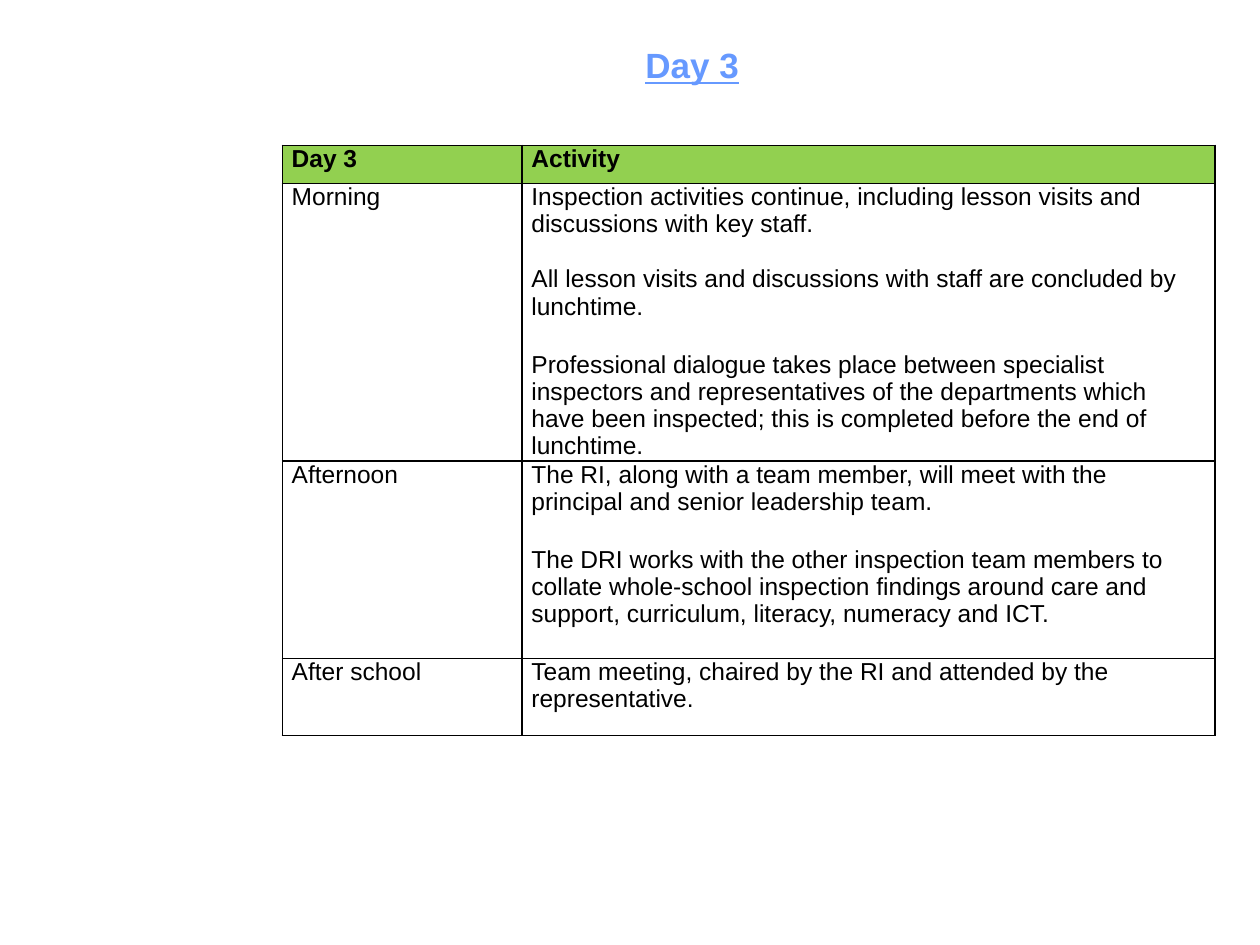
"""Build the Day 3 inspection timetable slide."""
from dataclasses import dataclass

import pptx
import pptx.dml.color
import pptx.enum.text
import pptx.oxml
import pptx.oxml.ns
import pptx.util

Pt = pptx.util.Pt
ALIGN = pptx.enum.text.PP_ALIGN
ANCHOR = pptx.enum.text.MSO_ANCHOR
FONT = "Arial"
BLACK = "000000"
HEADER_GREEN = "92D050"
TITLE_BLUE = "6699FF"
COLUMN_WIDTHS = (137, 396)


@dataclass
class Session:
    time: str
    activities: list[str]
    height: float
    gaps: tuple[float, ...] = ()
    header: bool = False


SESSIONS = [
    Session("Day 3", ["Activity"], 21.8, header=True),
    Session("Morning", [
        "Inspection activities continue, including lesson visits and "
        "discussions with key staff.",
        "All lesson visits and discussions with staff are concluded by lunchtime.",
        "Professional dialogue takes place between specialist inspectors and "
        "representatives of the departments which have been inspected; this is "
        "completed before the end of lunchtime.",
    ], 158.7, gaps=(16, 17.5)),
    Session("Afternoon", [
        "The RI, along with a team member, will meet with the principal and "
        "senior leadership team.",
        "The DRI works with the other inspection team members to collate "
        "whole-school inspection findings around care and support, curriculum, "
        "literacy, numeracy and ICT.",
    ], 112.8, gaps=(17.5,)),
    Session("After school", [
        "Team meeting, chaired by the RI and attended by the representative.",
    ], 43.9),
]


def color(value: str) -> pptx.dml.color.RGBColor:
    return pptx.dml.color.RGBColor.from_string(value)


def write(para, text: str, *, size: float = 14, fill: str = BLACK,
          bold: bool = False, underline: bool = False, align=ALIGN.LEFT,
          before: float = 0, leading: float | None = None) -> None:
    para.alignment = align
    para.space_before = Pt(before)
    if leading:
        para.line_spacing = Pt(leading)
    span = para.add_run()
    span.text = text
    font = span.font
    font.name, font.size = FONT, Pt(size)
    font.bold, font.underline = bold, underline
    font.color.rgb = color(fill)


def add_borders(cell, width: float = 1) -> None:
    properties = cell._tc.get_or_add_tcPr()
    namespace = pptx.oxml.ns.nsdecls("a")
    for index, side in enumerate(("lnL", "lnR", "lnT", "lnB")):
        properties.insert(index, pptx.oxml.parse_xml(
            f'<a:{side} {namespace} w="{Pt(width)}"><a:solidFill>'
            f'<a:srgbClr val="{BLACK}"/></a:solidFill></a:{side}>'))


def fill_cell(cell, texts: list[str], session: Session) -> None:
    cell.margin_left = cell.margin_right = Pt(5.4)
    cell.margin_top = cell.margin_bottom = 0
    cell.vertical_anchor = ANCHOR.TOP
    if session.header:
        cell.fill.solid()
        cell.fill.fore_color.rgb = color(HEADER_GREEN)
    else:
        cell.fill.background()
    add_borders(cell)
    frame = cell.text_frame
    for index, text in enumerate(texts):
        para = frame.add_paragraph() if index else frame.paragraphs[0]
        write(para, text, bold=session.header, leading=15.6,
              before=session.gaps[index - 1] if index else 0)


def add_title(page, text: str) -> None:
    box = page.shapes.title
    box.left, box.top, box.width, box.height = Pt(137.5), Pt(9), Pt(516), Pt(40)
    frame = box.text_frame
    frame.margin_top = frame.margin_bottom = 0
    frame.vertical_anchor = ANCHOR.BOTTOM
    write(frame.paragraphs[0], text, size=20, fill=TITLE_BLUE, bold=True,
          underline=True, align=ALIGN.CENTER)


def add_timetable(page, sessions: list[Session]) -> None:
    table = page.shapes.add_table(
        len(sessions), len(COLUMN_WIDTHS), Pt(161.3), Pt(83),
        Pt(sum(COLUMN_WIDTHS)), Pt(sum(s.height for s in sessions))).table
    table.first_row = table.horz_banding = False
    for column, width in zip(table.columns, COLUMN_WIDTHS):
        column.width = Pt(width)
    for row, session in zip(table.rows, sessions):
        row.height = Pt(session.height)
        for cell, texts in zip(row.cells, ([session.time], session.activities)):
            fill_cell(cell, texts, session)


def main() -> None:
    deck = pptx.Presentation()
    deck.slide_width, deck.slide_height = Pt(720), Pt(540)
    page = deck.slides.add_slide(deck.slide_layouts.get_by_name("Title Only"))
    add_title(page, "Day 3")
    add_timetable(page, SESSIONS)
    deck.save("out.pptx")


if __name__ == "__main__":
    main()
